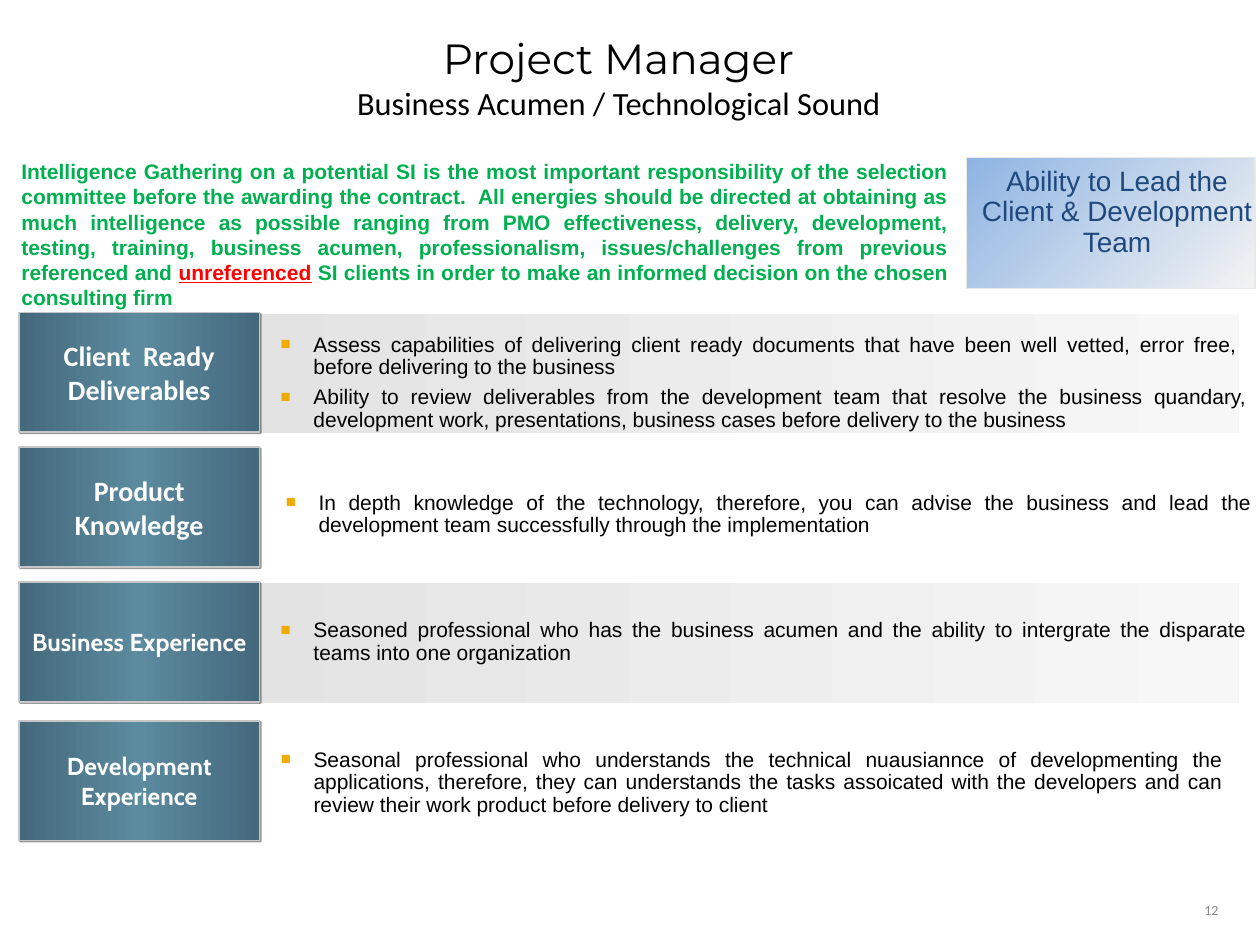
"""Builds the Project Manager slide on a grid of 100 columns by 75 rows."""
import lxml.etree
import pptx
import pptx.dml.color
import pptx.enum.shapes
import pptx.enum.text
import pptx.oxml
import pptx.oxml.ns
import pptx.util

COLUMNS, ROWS = 100, 75
CELL = pptx.util.Inches(0.1)
COLOURS = {
    "ink": "000000", "white": "FFFFFF", "green": "00B050", "red": "FF0000",
    "navy": "1F497D", "grey": "8C8C8C", "bullet": "F0AB00",
    "sky": "8EB4E3", "mist": "F3F3F3", "mist_edge": "E8E8E8",
    "band_start": "DEDEDE", "band_end": "F7F7F7",
    "steel_dark": "44697D", "steel_light": "5C8A9E", "steel_edge": "C6C6C6",
}
ALIGN = pptx.enum.text.PP_ALIGN
ANCHOR = pptx.enum.text.MSO_ANCHOR
SHAPE = pptx.enum.shapes.MSO_SHAPE

INTRO = [
    ("Intelligence Gathering on a potential SI is the most important responsibility of the "
     "selection committee before the awarding the contract.  All energies should be directed at "
     "obtaining as much intelligence as possible ranging from PMO effectiveness, delivery, "
     "development, testing, training, business acumen, professionalism, issues/challenges from "
     "previous referenced and ", "green", False),
    ("unreferenced", "red", True),
    (" SI clients in order to make an informed decision on the chosen consulting firm",
     "green", False),
]

# Each skill: top row, label, label font and size, banded, bullet box within the row, bullets
SKILLS = [
    (24.8, "Client  Ready Deliverables", "Calibri", 16, True, (19.8, 0.6, 78.7, 10), [
        "Assess capabilities of delivering client ready documents that have been well vetted, "
        "error free,  before delivering to the business",
        "Ability to review deliverables from the development team that resolve the business "
        "quandary, development work, presentations, business cases before delivery to the "
        "business"]),
    (35.5, "Product Knowledge", "Calibri", 16, False, (20.2, 2, 78.7, 6.7), [
        "In depth knowledge of the technology, therefore, you can advise the business and lead "
        "the development team successfully through the implementation"]),
    (46.2, "Business Experience", "Cabin", 14, True, (19.8, 1.4, 78.7, 6.7), [
        "Seasoned professional who has the business acumen and the ability to intergrate the "
        "disparate teams into one organization"]),
    (57.2, "Development Experience", "Cabin", 14, False, (19.8, 0.7, 76.8, 8.5), [
        "Seasonal professional who understands the technical nuausiannce of developmenting the "
        "applications, therefore, they can understands the tasks assoicated with the developers "
        "and can review their work product before delivery to client"]),
]


def place(box):
    """Turn a box in columns and rows into slide lengths."""
    return [round(length * CELL) for length in box]


def drawing(xml):
    """Parse one DrawingML element."""
    return pptx.oxml.parse_xml(xml.replace(" ", f' {pptx.oxml.ns.nsdecls("a")} ', 1))


def add_span(para, text, font, size, colour, bold=False, underline=False):
    """Add one formatted run."""
    span = para.add_run()
    span.text = text
    span.font.name = font
    span.font.size = pptx.util.Pt(size)
    span.font.bold = bold
    span.font.underline = underline
    span.font.color.rgb = pptx.dml.color.RGBColor.from_string(COLOURS[colour])


def set_frame(shape, anchor, inset_x=0.1, inset_y=0.05):
    """Set wrapping, anchor and insets of a text frame."""
    frame = shape.text_frame
    frame.word_wrap = True
    frame.auto_size = pptx.enum.text.MSO_AUTO_SIZE.NONE
    frame.vertical_anchor = anchor
    frame.margin_left = frame.margin_right = pptx.util.Inches(inset_x)
    frame.margin_top = frame.margin_bottom = pptx.util.Inches(inset_y)
    return frame


def add_text(page, box, align, anchor, inset_x=0.1, inset_y=0.05):
    """Add a text box and return its first paragraph."""
    shape = page.shapes.add_textbox(*place(box))
    para = set_frame(shape, anchor, inset_x, inset_y).paragraphs[0]
    para.alignment = align
    return para


def add_panel(page, box, stops, angle=0, edge=None):
    """Add a rectangle with a linear gradient and an optional edge."""
    panel = page.shapes.add_shape(SHAPE.RECTANGLE, *place(box))
    panel.shadow.inherit = False
    marks = "".join(
        f'<a:gs pos="{100000 * step // (len(stops) - 1)}"><a:srgbClr val="{COLOURS[stop]}"/></a:gs>'
        for step, stop in enumerate(stops))
    panel._element.spPr.insert(2, drawing(
        f'<a:gradFill rotWithShape="1"><a:gsLst>{marks}</a:gsLst>'
        f'<a:lin ang="{angle * 60000}" scaled="0"/></a:gradFill>'))
    if edge:
        panel.line.color.rgb = pptx.dml.color.RGBColor.from_string(COLOURS[edge])
        panel.line.width = pptx.util.Pt(1)
    else:
        panel.line.fill.background()
    return panel


def add_heading(page, box):
    """Fill and place the title."""
    title = page.shapes.title
    title.left, title.top, title.width, title.height = place(box)
    para = set_frame(title, ANCHOR.MIDDLE).paragraphs[0]
    para.alignment = ALIGN.CENTER
    add_span(para, "Project Manager", "Montserrat", 24.1, "ink")
    para.add_line_break()
    add_span(para, "Business Acumen / Technological Sound", "Calibri", 18.5, "ink")


def add_intro(page, box):
    """Add the bold introduction."""
    para = add_text(page, box, ALIGN.JUSTIFY, ANCHOR.TOP, 0, 0)
    for text, colour, underline in INTRO:
        add_span(para, text, "Arial", 12, colour, True, underline)


def add_callout(page, box):
    """Add the blue callout with its text."""
    left, top, width, height = box
    add_panel(page, box, ["sky", "mist"], 45, "mist_edge")
    para = add_text(page, (left, top + 0.3, width + 1, height - 2.1), ALIGN.CENTER, ANCHOR.TOP)
    para.line_spacing = 0.9
    add_span(para, "Ability to Lead the Client & Development Team", "Arial", 16, "navy")


def add_label(page, box, text, font, size):
    """Add a steel label with a hard shadow."""
    label = add_panel(page, box, ["steel_dark", "steel_light", "steel_dark"], 0, "steel_edge")
    effects = label._element.spPr.find(pptx.oxml.ns.qn("a:effectLst"))
    effects.append(drawing(
        '<a:outerShdw blurRad="0" dist="12700" dir="2700000" algn="tl" rotWithShape="0">'
        f'<a:srgbClr val="{COLOURS["ink"]}"><a:alpha val="40000"/></a:srgbClr></a:outerShdw>'))
    para = set_frame(label, ANCHOR.MIDDLE, 0.1, 0.1).paragraphs[0]
    para.alignment = ALIGN.CENTER
    add_span(para, text, font, size, "white", True)


def add_bullets(page, box, items):
    """Add justified paragraphs with square bullets."""
    para = add_text(page, box, ALIGN.JUSTIFY, ANCHOR.MIDDLE, 0.1, 0.15)
    frame = para._parent
    for number, item in enumerate(items):
        if number:
            para = frame.add_paragraph()
            para.alignment = ALIGN.JUSTIFY
            para.space_before = pptx.util.Pt(4.2)
        para.line_spacing = 0.9
        indent = pptx.util.Inches(0.26)
        properties = para._p.get_or_add_pPr()
        properties.set("marL", str(indent))
        properties.set("indent", str(-indent))
        for xml in (f'<a:buClr ><a:srgbClr val="{COLOURS["bullet"]}"/></a:buClr>',
                    '<a:buSzPct val="80000"/>', '<a:buFont typeface="Arial"/>',
                    '<a:buChar char="■"/>'):
            properties.append(drawing(xml))
        add_span(para, item, "Arial", 12, "ink")


def add_skill(page, box, skill):
    """Add one skill row: band, label and bullets."""
    left, top, width, height = box
    _, text, font, size, banded, (x, y, bullet_width, bullet_height), items = skill
    if banded:
        add_panel(page, (left, top + 0.1, width, height), ["band_start", "band_end"])
    add_label(page, (left, top, 19.1, height), text, font, size)
    add_bullets(page, (left + x, top + y, bullet_width, bullet_height), items)


def add_page_number(page, box):
    """Add the page number."""
    para = add_text(page, box, ALIGN.RIGHT, ANCHOR.MIDDLE)
    add_span(para, "12", "Calibri", 8, "grey")


def main():
    """Build and save the deck."""
    deck = pptx.Presentation()
    deck.slide_width, deck.slide_height = COLUMNS * CELL, ROWS * CELL
    page = deck.slides.add_slide(deck.slide_layouts[5])
    add_heading(page, (9.9, 2.2, 78.4, 7.8))
    add_intro(page, (1.7, 12.6, 73.6, 4.5))
    add_callout(page, (76.7, 12.5, 22.9, 10.4))
    for skill in SKILLS:
        add_skill(page, (1.5, skill[0], 96.8, 9.5), skill)
    add_page_number(page, (74.4, 71.4, 23.3, 1.6))
    deck.save("out.pptx")


if __name__ == "__main__":
    main()
